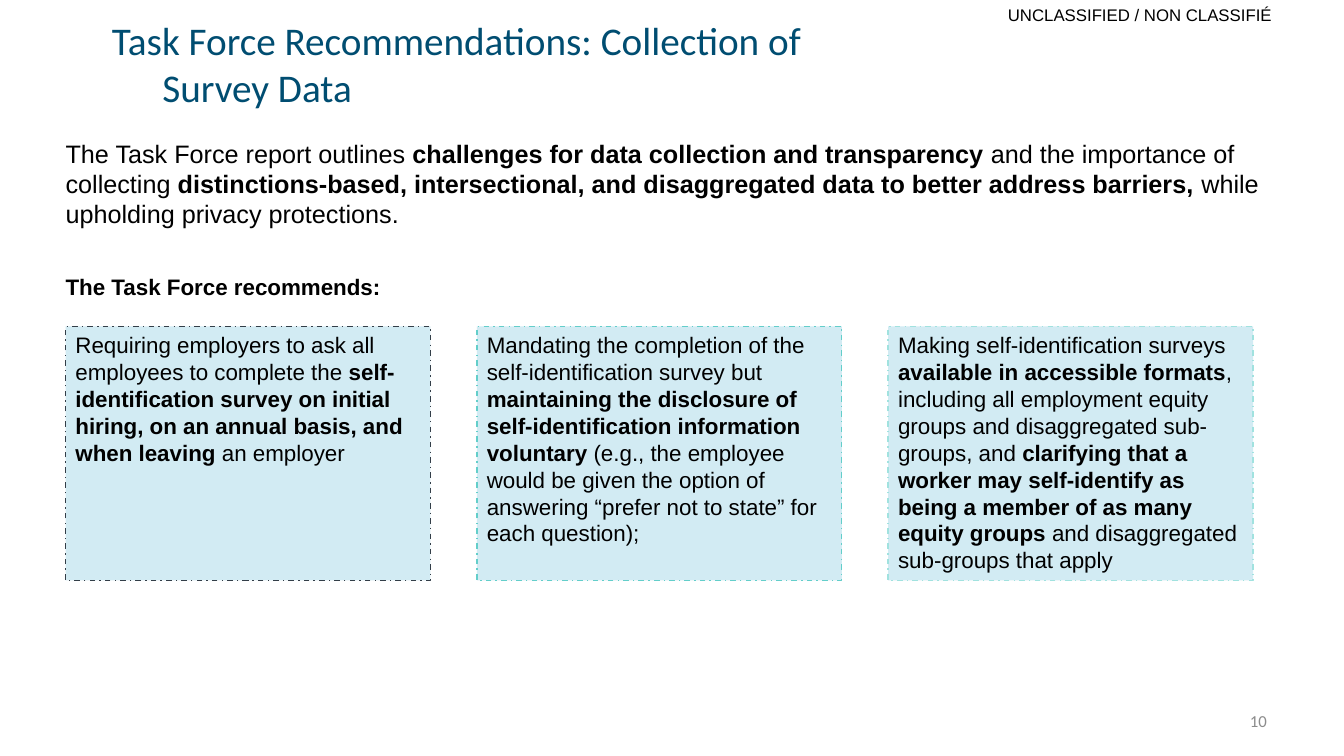
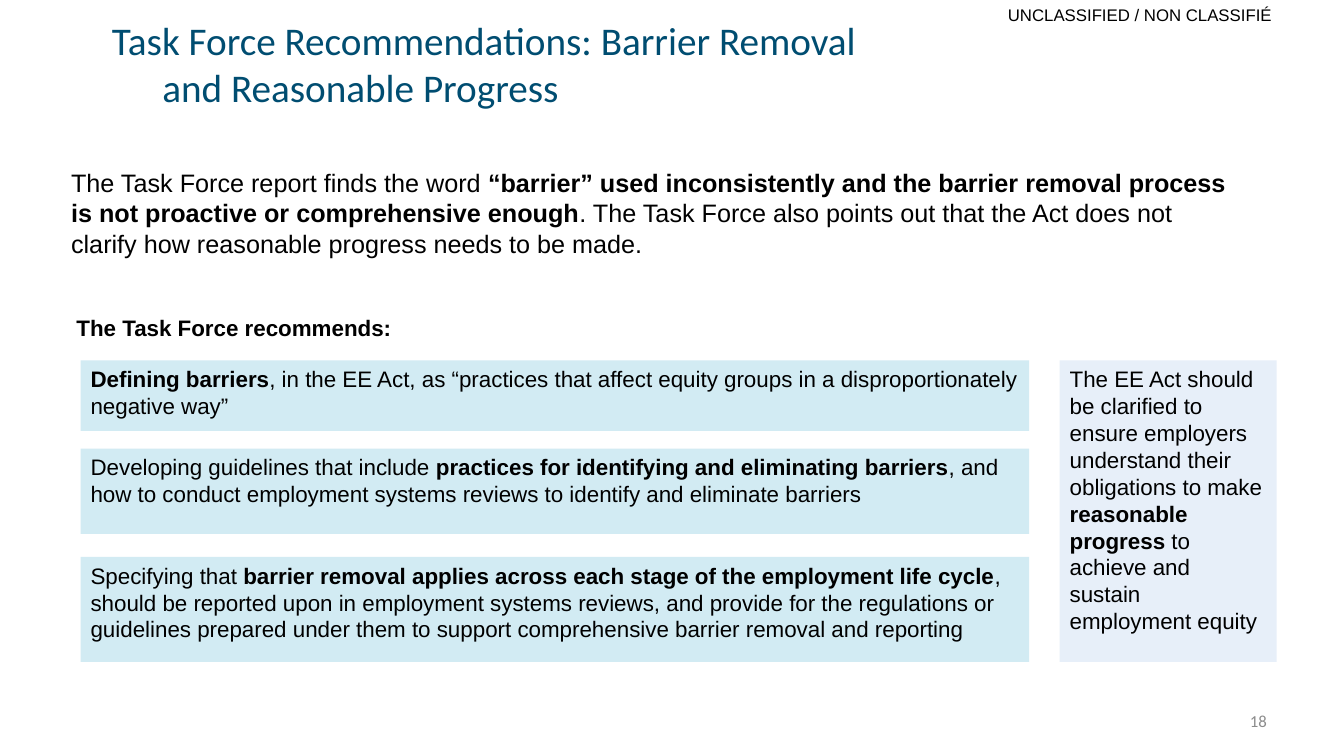
import pptx
import pptx.dml.color
import pptx.enum.dml
import pptx.enum.shapes
import pptx.enum.text
import pptx.util

Pt = pptx.util.Pt
ALIGN = pptx.enum.text.PP_ALIGN
ANCHOR = pptx.enum.text.MSO_ANCHOR

BLACK, TITLE_BLUE, NUMBER_GREY = "000000", "004D71", "8C8C8C"
CARD_BLUE, SIDE_BLUE = "D2EBF3", "E7EFF9"
BODY_FONT, TITLE_FONT = "Arial", "Calibri"


def color(value):
    """Turn a hex string into a colour."""
    return pptx.dml.color.RGBColor.from_string(value)


def write(shape, text, size, font=BODY_FONT, ink=BLACK, align=ALIGN.LEFT,
          anchor=ANCHOR.TOP, inset=True):
    """Fill a shape with one paragraph, with **bold** stretches."""
    frame = shape.text_frame
    frame.word_wrap = True
    frame.vertical_anchor = anchor
    if not inset:
        frame.margin_left = frame.margin_right = Pt(0)
        frame.margin_top = frame.margin_bottom = Pt(0)
    para = frame.paragraphs[0]
    para.alignment = align
    para.font.name = font
    para.font.size = Pt(size)
    para.font.color.rgb = color(ink)
    for index, part in enumerate(text.split("**")):
        if part:
            span = para.add_run()
            span.text = part
            if index % 2:
                span.font.bold = True
    return para


def add_text(page, place, text, size, **style):
    """Add a text box at left, top, width, height."""
    box = page.shapes.add_textbox(*map(Pt, place))
    return write(box, text, size, **style)


def add_card(page, place, text, fill=CARD_BLUE, outline=None):
    """Add a filled card, with a dash-dot outline if one is given."""
    card = page.shapes.add_shape(pptx.enum.shapes.MSO_SHAPE.RECTANGLE, *map(Pt, place))
    card.shadow.inherit = False
    card.fill.solid()
    card.fill.fore_color.rgb = color(fill)
    if outline:
        card.line.color.rgb = color(outline)
        card.line.width = Pt(1)
        card.line.dash_style = pptx.enum.dml.MSO_LINE.DASH_DOT
    else:
        card.line.fill.background()
    write(card, text, 16)


def add_page(deck, title, number):
    """Add a page with its classification, number and title."""
    page = deck.slides.add_slide(deck.slide_layouts[6])
    add_text(page, (670, 3.6, 238.6, 14.4), "UNCLASSIFIED / NON CLASSIFIÉ", 12,
             align=ALIGN.RIGHT, anchor=ANCHOR.MIDDLE, inset=False)
    add_text(page, (688, 500.4, 224, 28.8), number, 12, font=TITLE_FONT,
             ink=NUMBER_GREY, align=ALIGN.RIGHT, anchor=ANCHOR.MIDDLE)
    heading = add_text(page, (80, 10.8, 570, 69), title, 28, font=TITLE_FONT,
                       ink=TITLE_BLUE, anchor=ANCHOR.MIDDLE, inset=False)
    properties = heading._p.get_or_add_pPr()
    properties.set("marL", str(Pt(36)))
    properties.set("indent", str(Pt(-36)))
    return page


def add_lead(page, left, top, width, text):
    """Add the opening statement."""
    add_text(page, (left, top, width, 72.7), text, 18)


def add_prompt(page, left, top):
    """Add the line that introduces the recommendations."""
    add_text(page, (left, top, 420, 26.6), "**The Task Force recommends:**", 16)


def build_survey_page(deck):
    """Build the page on collecting survey data."""
    page = add_page(deck, "Task Force Recommendations: Collection of Survey Data", "10")
    add_lead(page, 39.8, 95, 897,
             "The Task Force report outlines **challenges for data collection and "
             "transparency** and the importance of collecting **distinctions-based, "
             "intersectional, and disaggregated data to better address barriers, **"
             "while upholding privacy protections.")
    add_prompt(page, 39.8, 191.5)
    cards = [
        ("333E48", "Requiring employers to ask all employees to complete the "
         "**self-identification survey on initial hiring, on an annual basis, and "
         "when leaving** an employer"),
        ("63CECA", "Mandating the completion of the self-identification survey but "
         "**maintaining the disclosure of self-identification information voluntary **"
         "(e.g., the employee would be given the option of answering “prefer not to "
         "state” for each question);"),
        ("A1E2DF", "Making self-identification surveys **available in accessible "
         "formats**, including all employment equity groups and disaggregated "
         "sub-groups, and **clarifying that a worker may self-identify as being a "
         "member of as many equity groups **and disaggregated sub-groups that apply"),
    ]
    width, gap = 260.7, 33.1
    for column, (outline, text) in enumerate(cards):
        left = 46.8 + column * (width + gap)
        add_card(page, (left, 233.2, width, 181.4), text, outline=outline)


def build_barrier_page(deck):
    """Build the page on barrier removal and reasonable progress."""
    page = add_page(deck, "Task Force Recommendations: Barrier Removal and Reasonable Progress",
                    "18")
    add_lead(page, 43.7, 116, 847,
             "The Task Force report finds the word **“barrier” used inconsistently and "
             "the barrier removal process is not proactive or comprehensive enough**. "
             "The Task Force also points out that the Act does not clarify how "
             "reasonable progress needs to be made.")
    add_prompt(page, 47.5, 220.5)
    cards = [
        (257.5, 50.4, "**Defining barriers**, in the EE Act, as “practices that affect "
         "equity groups in a disproportionately negative way”"),
        (320.4, 61, "Developing guidelines that include **practices for identifying and "
         "eliminating barriers**, and how to conduct employment systems reviews to "
         "identify and eliminate barriers"),
        (397.8, 75, "Specifying that **barrier removal applies across each stage of the "
         "employment life cycle**, should be reported upon in employment systems "
         "reviews, and provide for the regulations or guidelines prepared under them "
         "to support comprehensive barrier removal and reporting"),
    ]
    for top, height, text in cards:
        add_card(page, (57.6, top, 677.5, height), text)
    add_card(page, (757, 257.5, 155, 215.3),
             "The EE Act should be clarified to ensure employers understand their "
             "obligations to make **reasonable progress **to achieve and sustain "
             "employment equity", fill=SIDE_BLUE)


def main():
    """Build and save the deck."""
    deck = pptx.Presentation()
    deck.slide_width, deck.slide_height = Pt(960), Pt(540)
    build_survey_page(deck)
    build_barrier_page(deck)
    deck.save("out.pptx")


if __name__ == "__main__":
    main()
